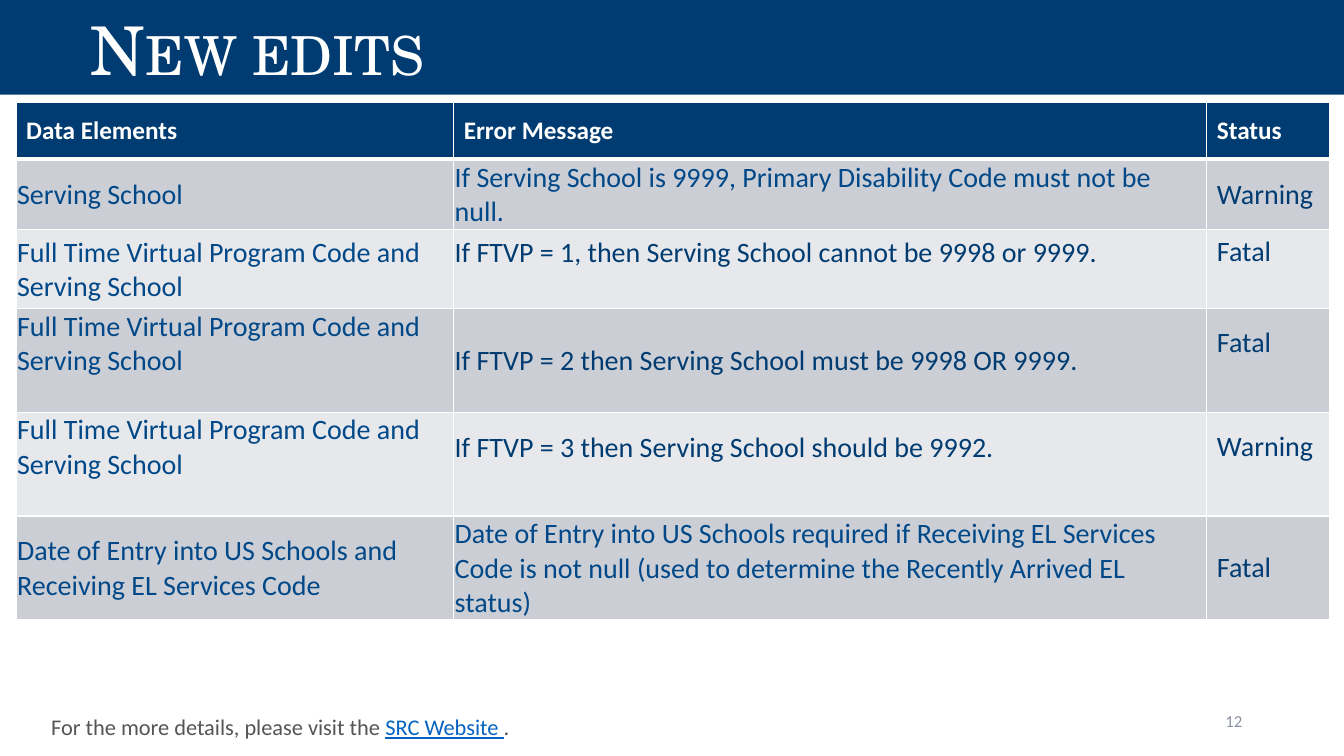
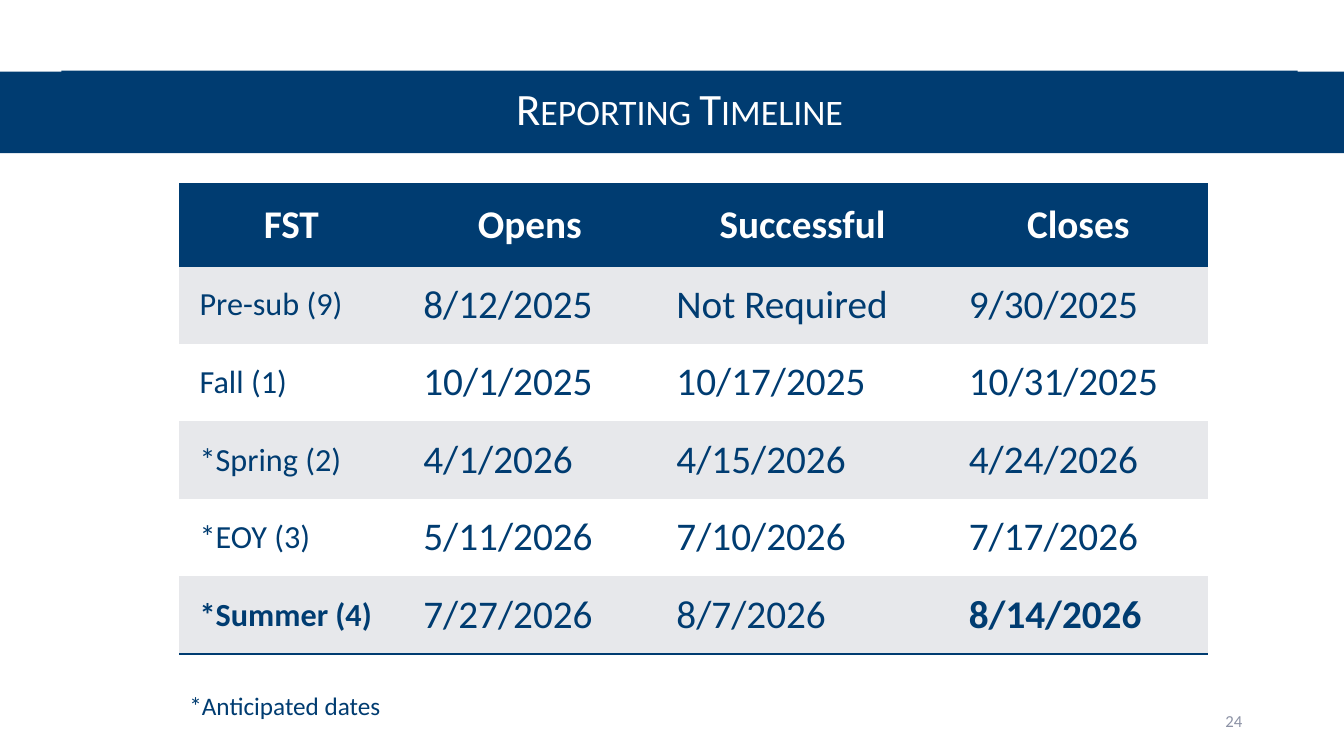
import pptx
import pptx.util
import pptx.dml.color
import pptx.enum.shapes
import pptx.enum.text
import pptx.oxml.ns
import lxml.etree

PX = 9144
WIDE, HIGH = 1333, 750
COLORS = {
    "navy": "003C71",
    "blue": "014888",
    "link": "0563C1",
    "gray": "555555",
    "mute": "8C92A5",
    "dark": "CCCED5",
    "light": "E7E8EB",
    "white": "FFFFFF",
}
PLAIN = "{2D5ABB26-0587-4C30-8999-92F81FD0307C}"
ALIGN = pptx.enum.text.PP_ALIGN
ANCHOR = pptx.enum.text.MSO_ANCHOR


def px(count):
    return pptx.util.Emu(count * PX)


def tint(name):
    return pptx.dml.color.RGBColor.from_string(COLORS[name])


class Deck:
    font = "Calibri"

    def __init__(self):
        self.file = pptx.Presentation()
        self.file.slide_width, self.file.slide_height = px(WIDE), px(HIGH)
        self.slide = None

    def page(self, number):
        self.slide = self.file.slides.add_slide(self.file.slide_layouts[5])
        self.text((942, 695, 300, 40), [(str(number), "mute")], 12, ALIGN.RIGHT)

    def style(self, para, size, color, align=ALIGN.LEFT, bold=False, font=None):
        para.alignment = align
        para.font.name = font or self.font
        para.font.size = pptx.util.Pt(size)
        para.font.bold = bold
        para.font.color.rgb = tint(color)

    def paint(self, shape, color):
        shape.fill.solid()
        shape.fill.fore_color.rgb = tint(color)

    def band(self, box):
        kind = pptx.enum.shapes.MSO_SHAPE.RECTANGLE
        band = self.slide.shapes.add_shape(kind, *map(px, box))
        band.shadow.inherit = False
        band.line.fill.background()
        self.paint(band, "navy")

    def title(self, text, box, size, align, anchor, left=10, font=None):
        title = self.slide.shapes.title
        self.slide.shapes._spTree.append(title._element)
        title.left, title.top, title.width, title.height = map(px, box)
        self.paint(title, "navy")
        frame = title.text_frame
        frame.auto_size = pptx.enum.text.MSO_AUTO_SIZE.NONE
        frame.word_wrap = True
        frame.vertical_anchor = anchor
        frame.margin_left = px(left)
        para = frame.paragraphs[0]
        para.line_spacing = 0.9
        self.style(para, size, "white", align, font=font)
        run = para.add_run()
        run.text = text
        run._r.get_or_add_rPr().set("cap", "small")

    def text(self, box, parts, size, align=ALIGN.LEFT):
        frame = self.slide.shapes.add_textbox(*map(px, box)).text_frame
        frame.word_wrap = True
        frame.vertical_anchor = ANCHOR.MIDDLE
        para = frame.paragraphs[0]
        self.style(para, size, parts[0][1], align)
        for words, color in parts:
            run = para.add_run()
            run.text = words
            if color != parts[0][1]:
                run.font.color.rgb = tint(color)
                run.font.underline = True

    def table(self, spot, cols, rows):
        box = (*spot, sum(cols), sum(rows))
        frame = self.slide.shapes.add_table(len(rows), len(cols), *map(px, box))
        grid = frame.table
        grid._tbl.tblPr.find(pptx.oxml.ns.qn("a:tableStyleId")).text = PLAIN
        for col, width in zip(grid.columns, cols):
            col.width = px(width)
        for row, height in zip(grid.rows, rows):
            row.height = px(height)
        return grid

    def cell(self, cell, text, size, color, fill, pads, edges,
             align=ALIGN.LEFT, bold=False):
        cell.vertical_anchor = ANCHOR.MIDDLE
        (cell.margin_left, cell.margin_top,
         cell.margin_right, cell.margin_bottom) = map(px, pads)
        self.edge(cell, edges)
        self.paint(cell, fill)
        para = cell.text_frame.paragraphs[0]
        para.text = text
        self.style(para, size, color, align, bold)

    def edge(self, cell, edges):
        prop = cell._tc.get_or_add_tcPr()
        name = pptx.oxml.ns.qn
        for side in "LRTB":
            if side in edges:
                color, width = edges[side]
                line = lxml.etree.SubElement(prop, name("a:ln" + side))
                line.set("w", str(pptx.util.Pt(width)))
                fill = lxml.etree.SubElement(line, name("a:solidFill"))
                tone = lxml.etree.SubElement(fill, name("a:srgbClr"))
                tone.set("val", COLORS[color])


def edits(deck):
    deck.page(12)
    deck.title("New edits", (0, 0, WIDE, 94), 48, ALIGN.LEFT, ANCHOR.BOTTOM,
               90, "TeX Gyre Schola")
    deck.text((41, 701, 1200, 40), [
        ("For the more details, please visit the ", "gray"),
        ("SRC Website ", "link"),
        (".", "gray"),
    ], 16)
    both = "Full Time Virtual Program Code and Serving School"
    heads = ("Data Elements", "Error Message", "Status")
    rules = [
        ("Serving School",
         "If Serving School is 9999, Primary Disability Code must not be null.",
         "Warning", "blue", ()),
        (both, "If FTVP = 1, then Serving School cannot be 9998 or 9999.",
         "Fatal", "navy", (1, 2)),
        (both, "If FTVP = 2 then Serving School must be 9998 OR 9999.",
         "Fatal", "navy", (0, 2)),
        (both, "If FTVP = 3 then Serving School should be 9992.",
         "Warning", "navy", (0, 1, 2)),
        ("Date of Entry into US Schools and Receiving EL Services Code",
         "Date of Entry into US Schools required if Receiving EL Services Code "
         "is not null (used to determine the Recently Arrived EL status)",
         "Fatal", "blue", ()),
    ]
    grid = deck.table((16, 102), (434, 747, 122), (56, 70, 78, 103, 103, 103))
    thin = dict.fromkeys("LRTB", ("white", 1))
    thick = ("white", 3)
    for col, head in enumerate(heads):
        deck.cell(grid.cell(0, col), head, 18, "white", "navy", (10, 5, 10, 5),
                  {**thin, "B": thick}, bold=True)
    for row, (*words, tone, lifted) in enumerate(rules, 1):
        fill = "dark" if row % 2 else "light"
        edges = {**thin, "T": thick} if row == 1 else thin
        for col, color in enumerate(("blue", tone, "navy")):
            left, top, right, base = (10, 5, 10, 5) if col == 2 else (1, 1, 1, 0)
            lift = 34 if col in lifted else 0
            deck.cell(grid.cell(row, col), words[col], 20, color, fill,
                      (left, top, right, base + lift), edges)


def dates(deck):
    deck.page(24)
    deck.band((0, 71, WIDE, 81))
    deck.title("Reporting Timeline", (61, 70, 1226, 81), 32, ALIGN.CENTER,
               ANCHOR.MIDDLE)
    terms = [
        ("FST", "Opens", "Successful", "Closes"),
        ("Pre-sub (9)", "8/12/2025", "Not Required", "9/30/2025"),
        ("Fall (1)", "10/1/2025", "10/17/2025", "10/31/2025"),
        ("*Spring (2)", "4/1/2026", "4/15/2026", "4/24/2026"),
        ("*EOY (3)", "5/11/2026", "7/10/2026", "7/17/2026"),
        ("*Summer (4)", "7/27/2026", "8/7/2026", "8/14/2026"),
    ]
    last = len(terms) - 1
    grid = deck.table((178, 183), (222, 251, 290, 257), [81] + [77] * last)
    rule = ("navy", 2)
    lines = {0: {"T": rule, "B": rule}, last: {"B": rule}}
    for row, words in enumerate(terms):
        head = row == 0
        fill = "navy" if head else "light" if row % 2 else "white"
        for col, word in enumerate(words):
            deck.cell(grid.cell(row, col), word,
                      23 if col == 0 and not head else 28,
                      "white" if head else "navy", fill, (20, 10, 20, 10),
                      lines.get(row, {}), ALIGN.CENTER if head else ALIGN.LEFT,
                      head or (row == last and col in (0, 3)))
    deck.text((178, 680, 374, 40), [("*Anticipated dates", "navy")], 18)


def main():
    deck = Deck()
    edits(deck)
    dates(deck)
    deck.file.save("out.pptx")


if __name__ == "__main__":
    main()
